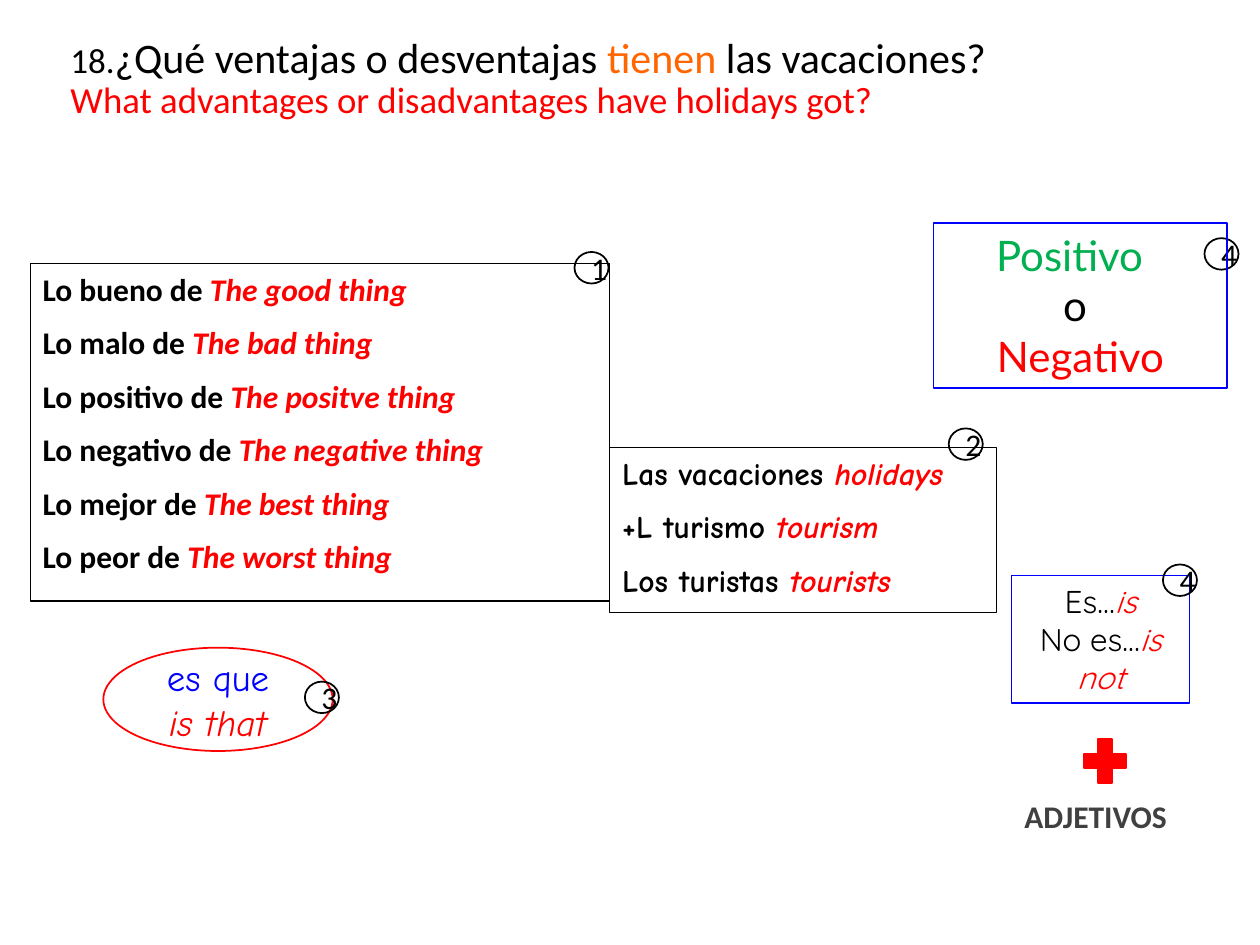
from dataclasses import dataclass

from pptx import Presentation
from pptx import util as u
from pptx.dml.color import RGBColor
from pptx.enum import shapes, text


@dataclass(frozen=True)
class Theme:
    """Colours, fonts and type sizes of the slide."""
    black: str = "000000"
    white: str = "FFFFFF"
    red: str = "FF0000"
    blue: str = "0000FF"
    green: str = "00B050"
    orange: str = "FF6600"
    grey: str = "404040"
    main: str = "Calibri"
    comic: str = "Comic Neue"
    lato: str = "Lato"
    quicksand: str = "Quicksand"
    number: int = 20
    body: int = 18
    medium: int = 21
    large: int = 24


THEME = Theme()
SHAPE = shapes.MSO_SHAPE
LEFT, CENTER = text.PP_ALIGN.LEFT, text.PP_ALIGN.CENTER
TOP, MIDDLE = text.MSO_ANCHOR.TOP, text.MSO_ANCHOR.MIDDLE


def style_run(run, font, size, color, bold=False, italic=False):
    """Apply font, size, colour and emphasis to a run."""
    run.font.name = font
    run.font.size = u.Pt(size)
    run.font.color.rgb = RGBColor.from_string(color)
    run.font.bold = bold
    run.font.italic = italic


def write_lines(holder, lines, font, size, align=CENTER, anchor=TOP, bold=False, gap=0):
    """Write one paragraph per line of (wording, colour, italic) pieces."""
    frame = holder.text_frame
    frame.word_wrap = True
    frame.vertical_anchor = anchor
    for index, pieces in enumerate(lines):
        paragraph = frame.paragraphs[0] if index == 0 else frame.add_paragraph()
        paragraph.alignment = align
        paragraph.space_before = u.Pt(gap)
        for wording, color, italic in pieces:
            run = paragraph.add_run()
            run.text = wording
            style_run(run, font, size, color, bold, italic)


def add_outline(slide, kind, box, line, width=0.75, fill=None):
    """Add a preset shape with a coloured outline and an optional fill."""
    outline = slide.shapes.add_shape(kind, *map(u.Inches, box))
    outline.shadow.inherit = False
    outline.line.color.rgb = RGBColor.from_string(line)
    outline.line.width = u.Pt(width)
    if fill:
        outline.fill.solid()
        outline.fill.fore_color.rgb = RGBColor.from_string(fill)
    else:
        outline.fill.background()
    return outline


def add_marker(slide, digit, left, top):
    """Add a small numbered circle."""
    marker = add_outline(slide, SHAPE.OVAL, (left, top, 0.27, 0.25), THEME.black, 1)
    write_lines(marker, [[(digit, THEME.black, False)]], THEME.main, THEME.body, anchor=MIDDLE)


def add_phrases(slide, box, pairs, font):
    """Add a box of bold Spanish phrases with their English meanings."""
    phrases = add_outline(slide, SHAPE.RECTANGLE, box, THEME.black)
    lines = [[(spanish + " ", THEME.black, False), (english, THEME.red, True)]
             for spanish, english in pairs]
    write_lines(phrases, lines, font, THEME.body, LEFT, bold=True, gap=9)


def add_question(slide):
    """Add the question with its translation below."""
    question = slide.shapes.add_textbox(*map(u.Inches, (0.46, 0.14, 8.78, 0.71)))
    frame = question.text_frame
    frame.word_wrap = True
    frame.vertical_anchor = MIDDLE
    paragraph = frame.paragraphs[0]
    paragraph.line_spacing = 0.9
    rows = [
        [("18.", THEME.number, THEME.black),
         ("¿Qué ventajas o desventajas ", THEME.large, THEME.black),
         ("tienen ", THEME.large, THEME.orange),
         ("las vacaciones? ", THEME.large, THEME.black)],
        [("What advantages or disadvantages have holidays got?", THEME.medium, THEME.red)],
    ]
    for row in rows:
        paragraph.add_line_break()
        for wording, size, color in row:
            run = paragraph.add_run()
            run.text = wording
            style_run(run, THEME.main, size, color)


def add_verdict(slide):
    """Add the positive or negative choice."""
    verdict = add_outline(slide, SHAPE.RECTANGLE, (7.41, 1.77, 2.33, 1.31), THEME.blue)
    write_lines(verdict, [[("Positivo  ", THEME.green, False)],
                          [("o ", THEME.black, False)],
                          [("Negativo", THEME.red, False)]], THEME.lato, THEME.large)


def add_link(slide):
    """Add the linking phrase in an ellipse."""
    link = add_outline(slide, SHAPE.OVAL, (0.82, 5.14, 1.82, 0.82), THEME.red, 1, THEME.white)
    write_lines(link, [[("es que", THEME.blue, False)], [("is that", THEME.red, True)]],
                THEME.comic, THEME.medium, anchor=MIDDLE)


def add_verbs(slide):
    """Add the verb forms that come before an adjective."""
    verbs = add_outline(slide, SHAPE.RECTANGLE, (8.03, 4.57, 1.41, 1.01), THEME.blue)
    write_lines(verbs, [[("Es…", THEME.black, False), ("is", THEME.red, True)],
                        [("No es…", THEME.black, False), ("is not", THEME.red, True)]],
                THEME.quicksand, THEME.body)


def add_adjectives(slide):
    """Add the adjectives label under a plus sign."""
    label = slide.shapes.add_textbox(*map(u.Inches, (7.67, 6.28, 2.05, 0.4)))
    write_lines(label, [[("ADJETIVOS", THEME.grey, False)]], THEME.main, THEME.body, bold=True)
    add_outline(slide, SHAPE.MATH_PLUS, (8.54, 5.8, 0.46, 0.48), THEME.red, 1, THEME.red)


def main():
    """Build and save the slide."""
    deck = Presentation()
    deck.slide_width, deck.slide_height = u.Inches(10), u.Inches(7.5)
    slide = deck.slides.add_slide(deck.slide_layouts[6])
    add_question(slide)
    add_marker(slide, "4", 9.56, 1.89)
    add_phrases(slide, (4.84, 3.55, 3.07, 1.31), [
        ("Las vacaciones", "holidays"),
        ("+L turismo", "tourism"),
        ("Los turistas", "tourists"),
    ], THEME.comic)
    add_link(slide)
    add_marker(slide, "3", 2.42, 5.41)
    add_phrases(slide, (0.24, 2.09, 4.6, 2.68), [
        ("Lo bueno de", "The good thing"),
        ("Lo malo de", "The bad thing"),
        ("Lo positivo de", "The positve thing"),
        ("Lo negativo de", "The negative thing"),
        ("Lo mejor de", "The best thing"),
        ("Lo peor de", "The worst thing"),
    ], THEME.main)
    add_marker(slide, "1", 4.56, 2)
    add_marker(slide, "2", 7.53, 3.4)
    add_verdict(slide)
    add_verbs(slide)
    add_marker(slide, "4", 9.23, 4.48)
    add_adjectives(slide)
    deck.save("out.pptx")


if __name__ == "__main__":
    main()
